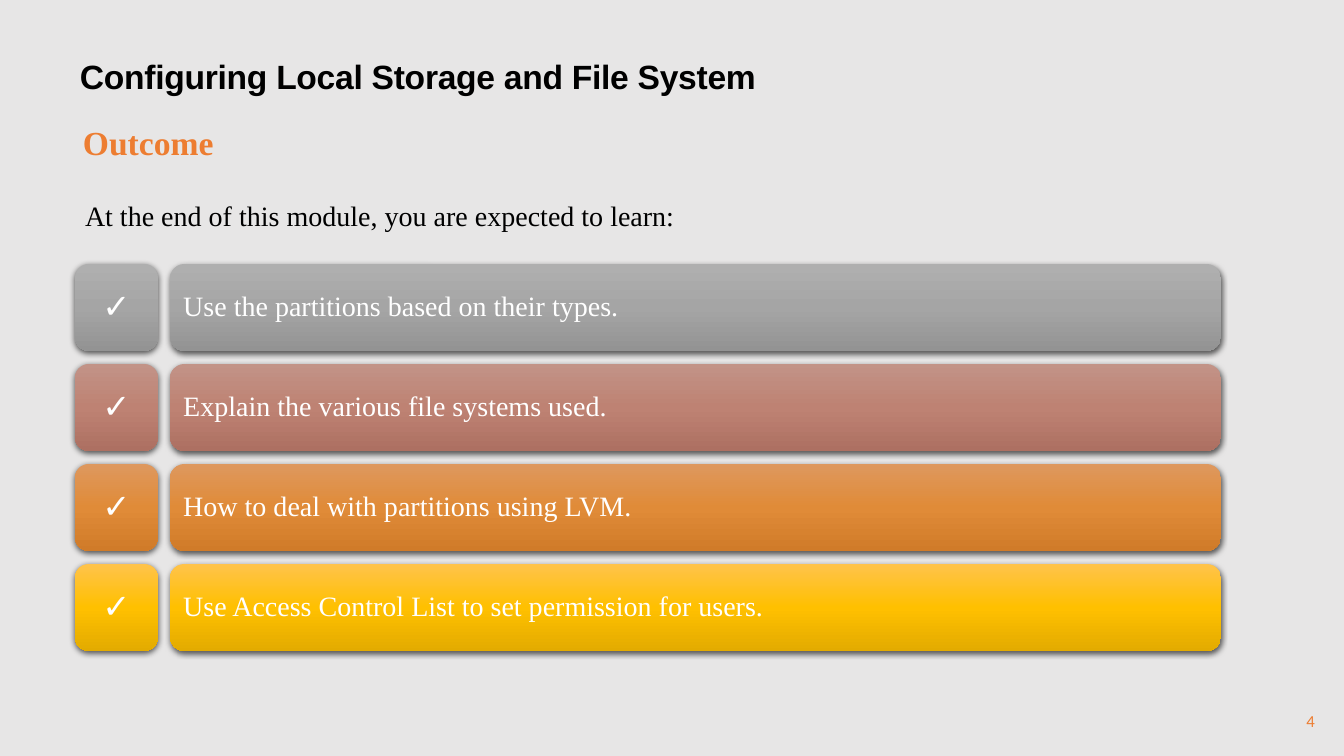
import copy

import pptx
import pptx.dml.color
import pptx.enum.shapes
import pptx.enum.text
import pptx.oxml
import pptx.oxml.ns
import pptx.util

ALIGN = pptx.enum.text.PP_ALIGN
ANCHOR = pptx.enum.text.MSO_ANCHOR
SERIF = "Times New Roman"
ACCENT = "ED7D31"
SHADOW = (
    '<a:outerShdw xmlns:a="http://schemas.openxmlformats.org/drawingml/2006/main" '
    'blurRad="57150" dist="19050" dir="5400000" algn="ctr" rotWithShape="0">'
    '<a:srgbClr val="000000"><a:alpha val="63000"/></a:srgbClr></a:outerShdw>'
)
OUTCOMES = [
    ("Use the partitions based on their types.", ("AFAFAF", "A5A5A5", "939393")),
    ("Explain the various file systems used.", ("C29387", "BE8273", "AD7062")),
    ("How to deal with partitions using LVM.", ("DE985E", "E08B38", "D07B29")),
    ("Use Access Control List to set permission for users.", ("FFC34B", "FFC000", "E3AB00")),
]


def px(length):
    return pptx.util.Emu(round(length * 914400 / 100.8))


def rgb(value):
    return pptx.dml.color.RGBColor.from_string(value)


class ModuleSlide:
    """Draws text and raised gradient tiles on one slide."""

    def __init__(self, presentation, background):
        self.slide = presentation.slides.add_slide(presentation.slide_layouts[6])
        self.slide.background.fill.solid()
        self.slide.background.fill.fore_color.rgb = rgb(background)

    def set_words(self, shape, words, size, color, font, bold=False, align=ALIGN.LEFT,
                  anchor=ANCHOR.TOP, spacing=1.0, tracking=0, inset=10):
        frame = shape.text_frame
        frame.word_wrap = True
        frame.vertical_anchor = anchor
        frame.margin_left = frame.margin_right = px(inset)
        frame.margin_top = frame.margin_bottom = px(5)
        frame.text = words
        paragraph = frame.paragraphs[0]
        paragraph.alignment = align
        paragraph.line_spacing = spacing
        run = paragraph.runs[0]
        run.font.size = pptx.util.Pt(size)
        run.font.name = font
        run.font.bold = bold
        run.font.color.rgb = rgb(color)
        if tracking:
            run.font._element.set("spc", str(tracking))

    def text(self, left, top, width, height, words, size, color, font, **style):
        box = self.slide.shapes.add_textbox(px(left), px(top), px(width), px(height))
        self.set_words(box, words, size, color, font, **style)

    def tile(self, left, top, width, height, colors, words, size, font, **style):
        tile = self.slide.shapes.add_shape(
            pptx.enum.shapes.MSO_SHAPE.ROUNDED_RECTANGLE,
            px(left), px(top), px(width), px(height))
        tile.line.fill.background()
        self.shade(tile, colors)
        self.set_words(tile, words, size, "FFFFFF", font, anchor=ANCHOR.MIDDLE,
                       spacing=0.9, **style)

    def shade(self, tile, colors):
        tile.fill.gradient()
        tile.fill.gradient_angle = 270
        properties = tile._element.spPr
        stop_list = properties.find(".//" + pptx.oxml.ns.qn("a:gsLst"))
        stop_list.append(copy.deepcopy(stop_list[-1]))
        for stop, color, position in zip(tile.fill.gradient_stops, colors, (0, 0.5, 1)):
            stop.color.rgb = rgb(color)
            stop.position = position
        tile.shadow.inherit = False
        effects = properties.find(pptx.oxml.ns.qn("a:effectLst"))
        effects.append(pptx.oxml.parse_xml(SHADOW))


def main():
    presentation = pptx.Presentation()
    presentation.slide_width = px(1344)
    presentation.slide_height = px(756)
    module = ModuleSlide(presentation, "E7E6E6")

    module.text(1278, 701, 47, 40, "4", 12, ACCENT, "Calibri",
                align=ALIGN.RIGHT, anchor=ANCHOR.MIDDLE)
    module.text(70, 51, 1130, 50, "Configuring Local Storage and File System",
                24, "000000", "Arial", bold=True, tracking=-20)
    module.text(73, 117, 826, 50, "Outcome", 24, ACCENT, SERIF, bold=True)
    module.text(75, 177, 1231, 61, "At the end of this module, you are expected to learn:",
                20, "000000", SERIF, spacing=1.5)

    for row, (outcome, colors) in enumerate(OUTCOMES):
        top = 264 + 100 * row
        module.tile(170, top, 1051, 87, colors, outcome, 20, SERIF, inset=9)
        module.tile(75, top, 83, 87, colors, "✓", 24, "Arial", bold=True,
                    align=ALIGN.CENTER)

    presentation.save("out.pptx")


if __name__ == "__main__":
    main()
